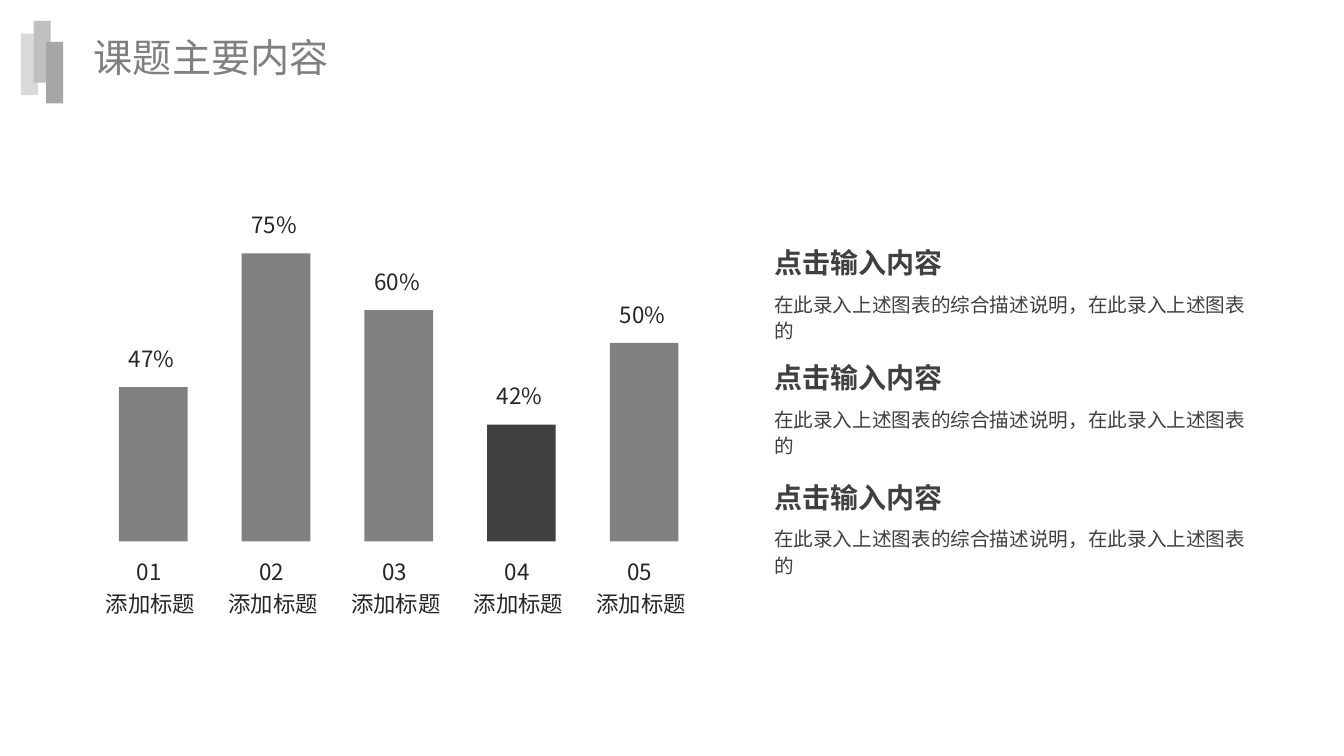
"""Build the topic overview slide with a bar comparison and three descriptions."""
from dataclasses import dataclass

from lxml.etree import SubElement
from pptx import Presentation
from pptx.dml.color import RGBColor
from pptx.enum.shapes import MSO_SHAPE
from pptx.enum.text import MSO_ANCHOR, MSO_AUTO_SIZE as AutoSize, PP_ALIGN as Align
from pptx.oxml.ns import qn
from pptx.shapes.base import BaseShape
from pptx.slide import Slide
from pptx.util import Pt

FONT = "Noto Sans CJK SC"
PALE = RGBColor(0xD9, 0xD9, 0xD9)
SILVER = RGBColor(0xBF, 0xBF, 0xBF)
ASH = RGBColor(0xA6, 0xA6, 0xA6)
GRAY = RGBColor(0x80, 0x80, 0x80)
DARK = RGBColor(0x40, 0x40, 0x40)
INK = RGBColor(0x26, 0x26, 0x26)

BASELINE = 386.8
FIRST_BAR_LEFT = 85
BAR_STEP = 87.64
BAR_WIDTH = 49.1
LABEL_HEIGHT = 26.6
DESCRIPTION_LEFT = 545.8


@dataclass(frozen=True)
class Box:
    left: float
    top: float
    width: float
    height: float


@dataclass(frozen=True)
class Style:
    size: float
    color: RGBColor
    align: Align = Align.LEFT
    bold: bool = False
    line_spacing: float = 1.0


@dataclass(frozen=True)
class Bar:
    value: str
    height: float
    color: RGBColor = GRAY


@dataclass(frozen=True)
class Stripe:
    left: float
    top: float
    color: RGBColor


TITLE = Style(28, GRAY)
LABEL = Style(16, INK, Align.JUSTIFY)
HEADING = Style(20, DARK, bold=True)
DESCRIPTION = Style(14, DARK, line_spacing=1.14)

STRIPES = [Stripe(15, 24, PALE), Stripe(24, 15, SILVER), Stripe(33, 30, ASH)]
BARS = [
    Bar("47%", 110.3),
    Bar("75%", 205.8),
    Bar("60%", 165.3),
    Bar("42%", 83.5, DARK),
    Bar("50%", 141.8),
]
DESCRIPTION_TOPS = [172, 254.2, 339.8]


def place(shape: BaseShape, box: Box) -> None:
    shape.left, shape.top = Pt(box.left), Pt(box.top)
    shape.width, shape.height = Pt(box.width), Pt(box.height)


def write(shape: BaseShape, text: str, style: Style, wrap: bool = True) -> None:
    frame = shape.text_frame
    frame.text = text
    frame.word_wrap = wrap
    frame.auto_size = AutoSize.SHAPE_TO_FIT_TEXT
    frame.vertical_anchor = MSO_ANCHOR.TOP
    paragraph = frame.paragraphs[0]
    paragraph.alignment = style.align
    paragraph.line_spacing = style.line_spacing
    font = paragraph.font
    font.size = Pt(style.size)
    font.bold = style.bold
    font.color.rgb = style.color
    font.name = FONT
    defaults = paragraph._p.pPr.find(qn("a:defRPr"))
    SubElement(defaults, qn("a:ea"), typeface=FONT)


def add_text(slide: Slide, box: Box, text: str, style: Style) -> None:
    shape = slide.shapes.add_textbox(0, 0, 0, 0)
    write(shape, text, style)
    place(shape, box)


def add_block(slide: Slide, box: Box, color: RGBColor) -> None:
    block = slide.shapes.add_shape(MSO_SHAPE.RECTANGLE, 0, 0, 0, 0)
    place(block, box)
    block.shadow.inherit = False
    block.fill.solid()
    block.fill.fore_color.rgb = color
    block.line.fill.background()


def add_bar(slide: Slide, index: int, bar: Bar) -> None:
    left = FIRST_BAR_LEFT + index * BAR_STEP
    top = BASELINE - bar.height
    add_block(slide, Box(left, top, BAR_WIDTH, bar.height), bar.color)
    add_text(slide, Box(left, top - 33.7, BAR_WIDTH, LABEL_HEIGHT), bar.value, LABEL)
    add_text(slide, Box(left + 5.5, 395.3, 38, LABEL_HEIGHT), f"{index + 1:02}", LABEL)
    add_text(slide, Box(left - 16.5, 418.3, 82.1, LABEL_HEIGHT), "添加标题", LABEL)


def add_description(slide: Slide, top: float) -> None:
    add_text(slide, Box(DESCRIPTION_LEFT, top, 206.6, 31.5), "点击输入内容", HEADING)
    add_text(
        slide,
        Box(DESCRIPTION_LEFT, top + 31, 364.3, 24),
        "在此录入上述图表的综合描述说明，在此录入上述图表的",
        DESCRIPTION,
    )


def main() -> None:
    deck = Presentation()
    deck.slide_width, deck.slide_height = Pt(960), Pt(540)
    slide = deck.slides.add_slide(deck.slide_layouts[5])
    for stripe in STRIPES:
        add_block(slide, Box(stripe.left, stripe.top, 12.2, 44), stripe.color)
    title = slide.shapes.title
    write(title, "课题主要内容", TITLE, wrap=False)
    place(title, Box(59.8, 20.2, 184.3, 41))
    for index, bar in enumerate(BARS):
        add_bar(slide, index, bar)
    for top in DESCRIPTION_TOPS:
        add_description(slide, top)
    deck.save("out.pptx")


if __name__ == "__main__":
    main()
